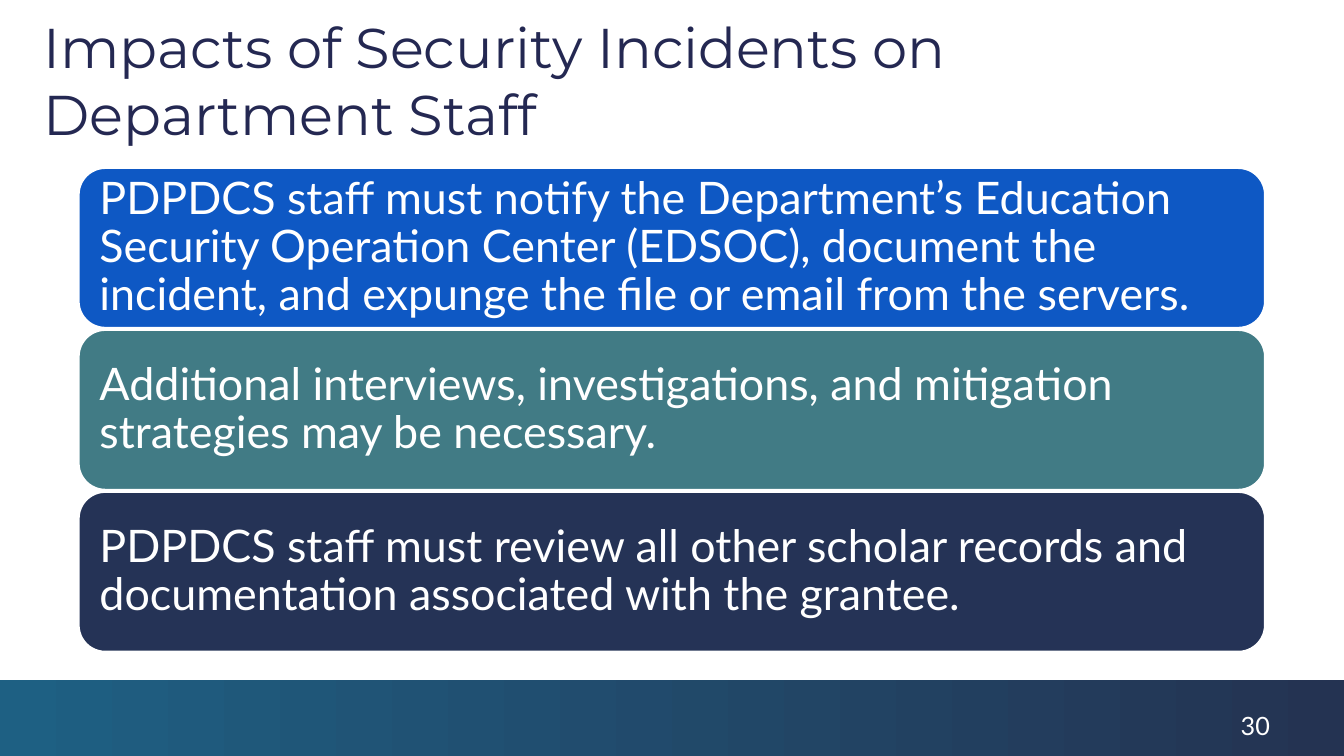
"""Build the slide on how security incidents affect department staff."""
from pptx import Presentation
from pptx.enum.shapes import MSO_SHAPE as Form
from pptx.enum.text import MSO_ANCHOR as Anchor, MSO_AUTO_SIZE as Fit, PP_ALIGN as Align
from pptx.dml.color import RGBColor as Color
from pptx.util import Inches, Pt

HUES = {"sea": "1E6083", "night": "243352", "title": "242852", "white": "FFFFFF",
        "blue": "0E58C4", "teal": "417B85", "navy": "253356"}
COLS, ROWS = 80, 45

BARS = [
    ("blue", "PDPDCS staff must notify the Department’s Education Security Operation Center "
             "(EDSOC), document the incident, and expunge the file or email from the servers."),
    ("teal", "Additional interviews, investigations, and mitigation strategies may be necessary."),
    ("navy", "PDPDCS staff must review all other scholar records and documentation "
             "associated with the grantee."),
]


def hue(name):
    return Color.from_string(HUES[name])


def write(frame, text, size, font="Lato", color="white", anchor=Anchor.TOP, lead=None, inset=None):
    frame.word_wrap = True
    frame.auto_size = Fit.NONE
    frame.vertical_anchor = anchor
    if inset is not None:
        frame.margin_left = frame.margin_right = Inches(inset)
        frame.margin_top = frame.margin_bottom = Inches(inset)
    para = frame.paragraphs[0]
    para.alignment = Align.LEFT
    if lead:
        para.line_spacing = lead
    run = para.add_run()
    run.text = text
    run.font.size = Pt(size)
    run.font.name = font
    run.font.color.rgb = hue(color)


class Deck:
    def __init__(self):
        self.prs = Presentation()
        self.prs.slide_width, self.prs.slide_height = Inches(13.333), Inches(7.5)
        self.slide = self.prs.slides.add_slide(self.prs.slide_layouts[5])

    def place(self, col, row, wide, high):
        across = self.prs.slide_width / COLS
        down = self.prs.slide_height / ROWS
        return [round(n) for n in (col * across, row * down, wide * across, high * down)]

    def title(self, text, *cells):
        head = self.slide.shapes.title
        head.left, head.top, head.width, head.height = self.place(*cells)
        write(head.text_frame, text, 40, font="Montserrat", color="title", anchor=Anchor.MIDDLE)

    def band(self, start, end, *cells):
        shape = self.slide.shapes.add_shape(Form.RECTANGLE, *self.place(*cells))
        shape.shadow.inherit = False
        shape.line.fill.background()
        shape.fill.gradient()
        shape.fill.gradient_angle = 0
        for stop, name in zip(shape.fill.gradient_stops, (start, end)):
            stop.color.rgb = hue(name)

    def bar(self, text, fill, *cells):
        shape = self.slide.shapes.add_shape(Form.ROUNDED_RECTANGLE, *self.place(*cells))
        shape.shadow.inherit = False
        shape.fill.solid()
        shape.fill.fore_color.rgb = hue(fill)
        shape.line.color.rgb = hue("white")
        shape.line.width = Pt(1.5)
        write(shape.text_frame, text, 32, anchor=Anchor.MIDDLE, lead=0.9, inset=0.13)

    def label(self, text, size, *cells):
        box = self.slide.shapes.add_textbox(*self.place(*cells))
        write(box.text_frame, text, size)


def main():
    deck = Deck()
    deck.band("sea", "night", 0, 40.5, COLS, 4.5)
    deck.title("Impacts of Security Incidents on Department Staff", 2, 1.5, 75.96, 6.5)
    for i, (fill, text) in enumerate(BARS):
        deck.bar(text, fill, 4.68, 10 + i * 9.64, 70.62, 9.52)
    deck.label("30", 18, 73.26, 42, 4.68, 1.62)
    deck.prs.save("out.pptx")


if __name__ == "__main__":
    main()
